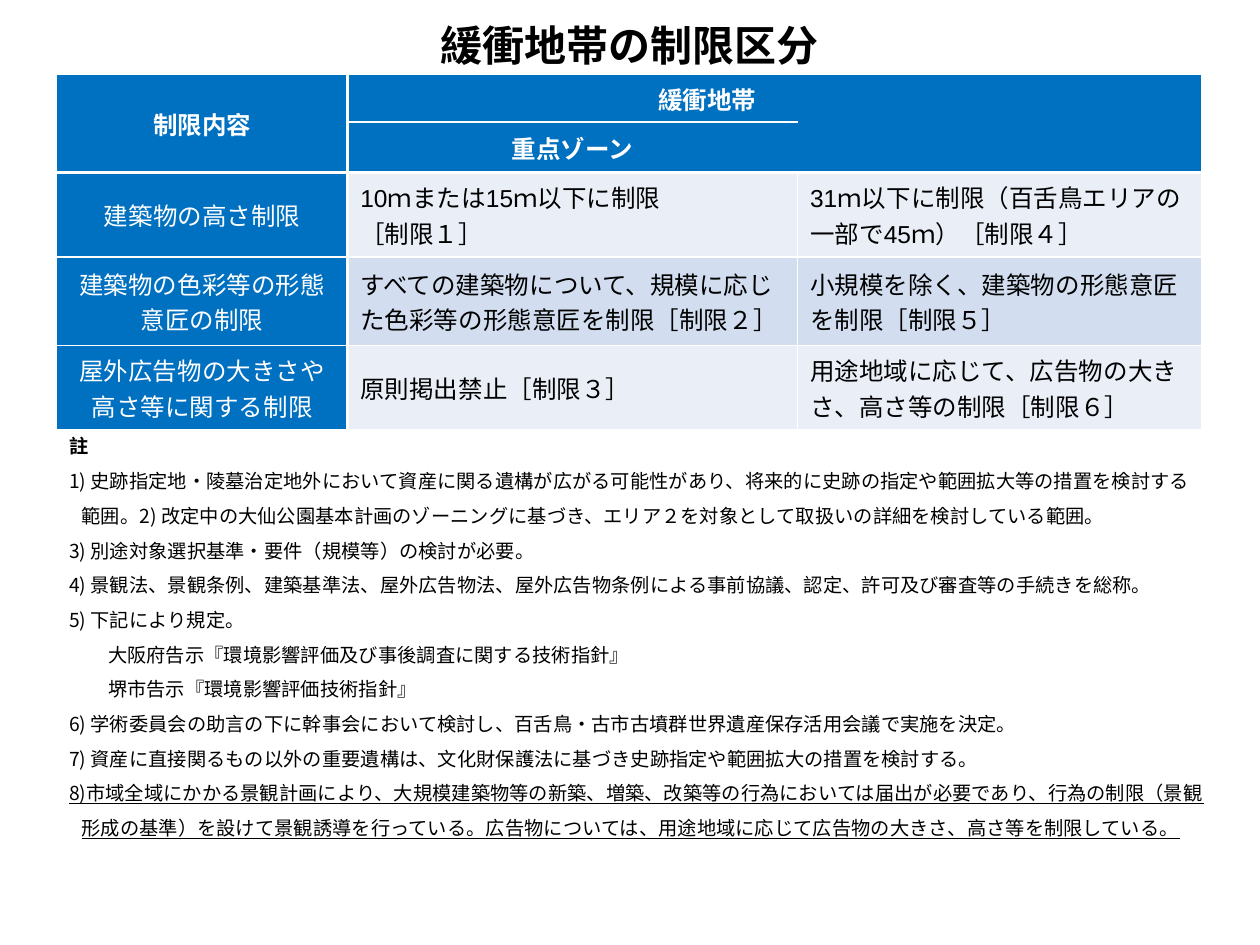
from lxml import etree
from pptx import Presentation
from pptx import util as u
from pptx.dml.color import RGBColor
from pptx.enum import text
from pptx.oxml.ns import qn

Inches = u.Inches
BLUE, WHITE, BLACK = "0070C0", "FFFFFF", "000000"
PALE, MID = "EAEFF7", "D2DEEF"
EAST_ASIAN = "Noto Sans CJK JP"
THIN, THICK = 1, 2.25
COLUMNS = [2.31, 3.57, 3.21]
ROWS = [0.38, 0.38, 0.67, 0.7, 0.67]
HEADER_ROWS = 2
TABLE_TEXT = [
    ["制限内容", "緩衝地帯", ""],
    ["", "重点ゾーン", ""],
    ["建築物の高さ制限", "10ｍまたは15ｍ以下に制限\n［制限１］",
     "31ｍ以下に制限（百舌鳥エリアの一部で45ｍ）［制限４］"],
    ["建築物の色彩等の形態意匠の制限",
     "すべての建築物について、規模に応じた色彩等の形態意匠を制限［制限２］",
     "小規模を除く、建築物の形態意匠を制限［制限５］"],
    ["屋外広告物の大きさや高さ等に関する制限", "原則掲出禁止［制限３］",
     "用途地域に応じて、広告物の大きさ、高さ等の制限［制限６］"],
]

# Left margin and first-line indent of each kind of note
HANGING, FLUSH, INSET = (0.1, -0.1), (0, 0), (0.31, 0)
NOTES = [
    (HANGING, "註"),
    (HANGING, "1) 史跡指定地・陵墓治定地外において資産に関る遺構が広がる可能性があり、"
              "将来的に史跡の指定や範囲拡大等の措置を検討する範囲。"
              "2) 改定中の大仙公園基本計画のゾーニングに基づき、"
              "エリア２を対象として取扱いの詳細を検討している範囲。"),
    (HANGING, "3) 別途対象選択基準・要件（規模等）の検討が必要。"),
    (HANGING, "4) 景観法、景観条例、建築基準法、屋外広告物法、屋外広告物条例による"
              "事前協議、認定、許可及び審査等の手続きを総称。"),
    (FLUSH, "5) 下記により規定。"),
    (INSET, "大阪府告示『環境影響評価及び事後調査に関する技術指針』"),
    (INSET, "堺市告示『環境影響評価技術指針』"),
    (FLUSH, "6) 学術委員会の助言の下に幹事会において検討し、"
            "百舌鳥・古市古墳群世界遺産保存活用会議で実施を決定。"),
    (HANGING, "7) 資産に直接関るもの以外の重要遺構は、"
              "文化財保護法に基づき史跡指定や範囲拡大の措置を検討する。"),
    (HANGING, "8)市域全域にかかる景観計画により、大規模建築物等の新築、増築、改築等の行為"
              "においては届出が必要であり、行為の制限（景観形成の基準）を設けて"
              "景観誘導を行っている。広告物については、用途地域に応じて広告物の大きさ、"
              "高さ等を制限している。"),
]


def color(value):
    return RGBColor.from_string(value)


def format_runs(para, size, font, fill, bold=False, underline=None):
    for span in para.runs:
        span.font.size = u.Pt(size)
        span.font.name = font
        span.font.bold = bold
        span.font.underline = underline
        span.font.color.rgb = color(fill)
        east_asian = etree.SubElement(span.font._element, qn("a:ea"))
        east_asian.set("typeface", EAST_ASIAN)


def add_text_frame(page, box):
    frame = page.shapes.add_textbox(*map(Inches, box)).text_frame
    frame.word_wrap = True
    return frame


def add_title(page, box):
    frame = add_text_frame(page, box)
    frame.vertical_anchor = text.MSO_ANCHOR.MIDDLE
    frame.text = "緩衝地帯の制限区分"
    para = frame.paragraphs[0]
    para.alignment = text.PP_ALIGN.CENTER
    para.line_spacing = 0.9
    format_runs(para, 24, "Arial", BLACK, bold=True)


def set_borders(cell, widths):
    """Draw white borders; widths maps the sides L, R, T, B to points."""
    properties = cell._tc.get_or_add_tcPr()
    for side, width in widths.items():
        line = etree.SubElement(properties, qn("a:ln" + side), w=str(u.Pt(width)))
        if width:
            fill = etree.SubElement(line, qn("a:solidFill"))
            etree.SubElement(fill, qn("a:srgbClr"), val=WHITE)
        else:
            etree.SubElement(line, qn("a:noFill"))


def border_widths(row, column):
    open_header = row < HEADER_ROWS
    return {
        "L": THICK if column == 1 else 0 if column == 2 and open_header else THIN,
        "R": THICK if column == 0 else 0 if column == 1 and open_header else THIN,
        "T": THICK if row == HEADER_ROWS else THIN,
        "B": THICK if row == HEADER_ROWS - 1 else THIN,
    }


def fill_cell(cell, row, column):
    header = row < HEADER_ROWS
    label = header or column == 0
    set_borders(cell, border_widths(row, column))
    cell.fill.solid()
    cell.fill.fore_color.rgb = color(BLUE if label else MID if row % 2 else PALE)
    cell.vertical_anchor = text.MSO_ANCHOR.MIDDLE
    content = TABLE_TEXT[row][column]
    if not content:
        return
    cell.text = content
    font = "Calibri" if header else "Arial"
    for para in cell.text_frame.paragraphs:
        para.alignment = text.PP_ALIGN.CENTER if label else text.PP_ALIGN.LEFT
        format_runs(para, 14, font, WHITE if label else BLACK, bold=header)


def add_zone_table(page, left, top):
    frame = page.shapes.add_table(len(ROWS), len(COLUMNS), Inches(left), Inches(top),
                                  Inches(sum(COLUMNS)), Inches(sum(ROWS)))
    table = frame.table
    for column, width in zip(table.columns, COLUMNS):
        column.width = Inches(width)
    for row, height in zip(table.rows, ROWS):
        row.height = Inches(height)
    for row in range(len(ROWS)):
        for column in range(len(COLUMNS)):
            fill_cell(table.cell(row, column), row, column)
    for column in (0, 2):
        table.cell(0, column).merge(table.cell(1, column))
    # The zone heading is centred across both zone columns
    table.cell(0, 1).margin_left = Inches(2.24)


def add_notes(page, box):
    frame = add_text_frame(page, box)
    frame.text = "\n".join(note for _, note in NOTES)
    last = len(NOTES) - 1
    for index, (para, (indents, _)) in enumerate(zip(frame.paragraphs, NOTES)):
        margin, indent = indents
        properties = para._p.get_or_add_pPr()
        properties.set("marL", str(Inches(margin)))
        properties.set("indent", str(Inches(indent)))
        para.line_spacing = 1.5
        format_runs(para, 11, EAST_ASIAN, BLACK, bold=index == 0,
                    underline=True if index == last else None)


def main():
    deck = Presentation()
    deck.slide_width, deck.slide_height = Inches(10), Inches(7.5)
    page = deck.slides.add_slide(deck.slide_layouts[6])
    add_notes(page, (0.45, 3.31, 9.24, 3.77))
    add_zone_table(page, 0.45, 0.59)
    add_title(page, (1.92, 0.11, 6.16, 0.54))
    deck.save("out.pptx")


if __name__ == "__main__":
    main()
